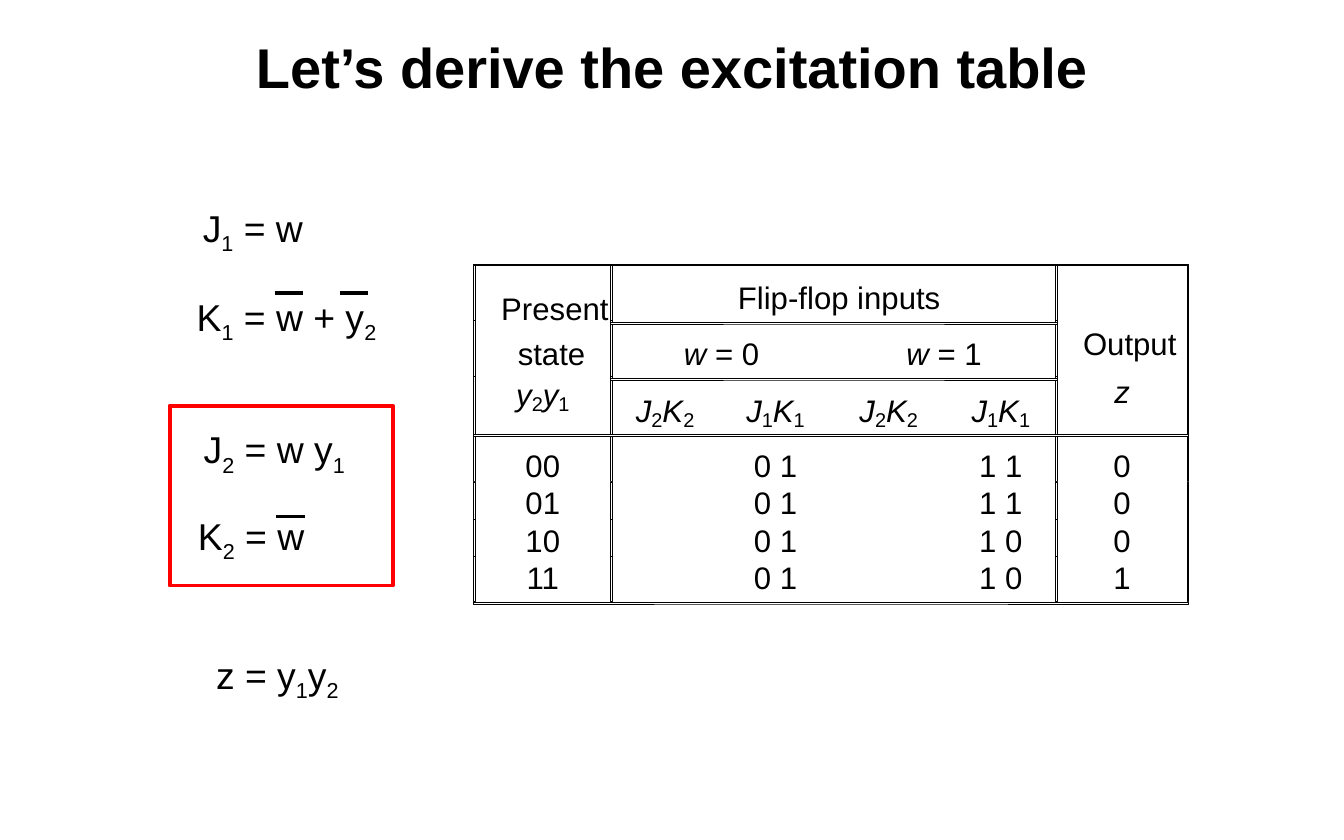
from itertools import pairwise

from lxml import etree
from pptx import Presentation
from pptx.dml.color import RGBColor
from pptx.enum.shapes import MSO_CONNECTOR, MSO_SHAPE
from pptx.enum.text import MSO_ANCHOR, PP_ALIGN
from pptx.oxml.ns import qn
from pptx.util import Cm, Pt

LINE = MSO_CONNECTOR.STRAIGHT
RECT = MSO_SHAPE.RECTANGLE
MIDDLE, BOTTOM = MSO_ANCHOR.MIDDLE, MSO_ANCHOR.BOTTOM
CENTER = PP_ALIGN.CENTER
BLACK, WHITE, RED = "000000", "FFFFFF", "FF0000"
VARIABLES = "JKwyz"


def color(value):
    return RGBColor.from_string(value)


def write(p, text, size, sub_size, sub_shift, italic=False):
    """Add the runs between bars; "_" starts a subscript, variables may be italic."""
    for piece in text.split("|"):
        r = p.add_run()
        r.text = piece.removeprefix("_")
        r.font.name = "Arial"
        r.font.size = Pt(size)
        r.font.color.rgb = color(BLACK)
        if italic and piece in VARIABLES:
            r.font.italic = True
        if piece.startswith("_"):
            r.font.size = Pt(sub_size)
            r.font._element.set("baseline", str(sub_shift * 1000))


prs = Presentation()
prs.slide_width, prs.slide_height = Cm(30.48), Cm(19.05)
s = prs.slides.add_slide(prs.slide_layouts[6])

# Title
tf = s.shapes.add_textbox(Cm(2.54), Cm(0.61), Cm(25.4), Cm(2.18)).text_frame
tf.word_wrap = True
tf.vertical_anchor = MIDDLE
tf.margin_bottom = Cm(0.52)
p = tf.paragraphs[0]
p.alignment = CENTER
write(p, "Let’s derive the excitation table", 36, 36, 0)
p.runs[0].font.bold = True

# Equations
equations = [
    (4.35, 4.53, 2.87, "J|_1| = w"),
    (4.21, 6.55, 4.7, "K|_1| = w + y|_2"),
    (4.37, 9.55, 3.84, "J|_2| = w y|_1"),
    (4.24, 11.51, 3.0, "K|_2| = w"),
    (4.65, 14.66, 3.4, "z = y|_1|y|_2"),
]
for x, y, width, text in equations:
    tf = s.shapes.add_textbox(Cm(x), Cm(y), Cm(width), Cm(1.28)).text_frame
    tf.word_wrap = False
    write(tf.paragraphs[0], text, 24, 24, -25)

# Overlines of the negated variables
for x, y in [(6.23, 6.65), (7.7, 6.65), (6.27, 11.71)]:
    bar = s.shapes.add_connector(LINE, Cm(x), Cm(y), Cm(x + 0.64), Cm(y))
    bar.line.color.rgb = color(BLACK)
    bar.line.width = Pt(2.25)
    etree.SubElement(bar._element.spPr, qn("a:effectLst"))

# Excitation table
col_edges = [10.76, 13.86, 16.31, 18.87, 21.44, 23.96, 26.94]
row_edges = [6.01, 7.42, 8.52, 9.87, 11.03, 11.87, 12.72, 13.68]
row_margins = [0.37, 0.23, 0.35, 0.32, 0, 0, 0]
left, right = col_edges[0], col_edges[-1]
top, bottom = row_edges[0], row_edges[-1]
table = s.shapes.add_table(7, 6, Cm(left), Cm(top),
                           Cm(right - left), Cm(bottom - top)).table
table.first_row = table.horz_banding = False
for col, (a, b) in zip(table.columns, pairwise(col_edges)):
    col.width = Cm(b - a)
for row, (a, b), margin in zip(table.rows, pairwise(row_edges), row_margins):
    row.height = Cm(b - a)
    for cell in row.cells:
        cell.fill.background()
        cell.margin_left = cell.margin_right = cell.margin_bottom = 0
        cell.margin_top = Cm(margin)

for first, last in [((0, 1), (0, 4)), ((1, 1), (1, 2)), ((1, 3), (1, 4))]:
    table.cell(*first).merge(table.cell(*last))

# The outer headings sit closer together than the flip-flop headings
for i, j in [(0, 0), (2, 0), (1, 5), (2, 5)]:
    table.cell(i, j).margin_top = 0
table.cell(0, 0).vertical_anchor = BOTTOM
for i, j, indent in [(0, 0, 0.55), (1, 0, 0.4), (0, 1, 0.25), (1, 5, 0.35)]:
    table.cell(i, j).margin_left = Cm(indent)

contents = {
    (0, 0): "Present", (1, 0): "state", (2, 0): "y|_2|y|_1",
    (0, 1): "Flip-flop inputs", (1, 1): "w| = 0", (1, 3): "w| = 1",
    (1, 5): "Output", (2, 5): "z",
}
for j, flip_flop in enumerate([2, 1, 2, 1], start=1):
    contents[2, j] = f"J|_{flip_flop}|K|_{flip_flop}"
states = [("00", "0 1", "1 1", "0"), ("01", "0 1", "1 1", "0"),
          ("10", "0 1", "1 0", "0"), ("11", "0 1", "1 0", "1")]
for i, state in enumerate(states, start=3):
    for j, value in zip((0, 2, 4, 5), state):
        contents[i, j] = value

for (i, j), text in contents.items():
    p = table.cell(i, j).text_frame.paragraphs[0]
    p.alignment = CENTER
    write(p, text, 20, 22, -15, italic=True)

# Double rules: thin white bars with black outlines
gap = 0.04
rule_tops = [6.02, 7.29, 8.56, 9.89, 10.95, 11.81, 12.65, 13.67]
rules = [(col_edges[j], a, gap, b - a)
         for a, b in pairwise(rule_tops) for j in (0, 1, 5, 6)]
rules += [(left, y, right - left + gap, gap) for y in (6.01, 9.88, 13.68)]
rules += [(col_edges[1], y, col_edges[5] - col_edges[1] + gap, gap)
          for y in (7.33, 8.6)]
for x, y, width, height in rules:
    rule = s.shapes.add_shape(RECT, Cm(x - gap / 2), Cm(y - gap / 2),
                              Cm(width), Cm(height))
    rule.shadow.inherit = False
    rule.fill.solid()
    rule.fill.fore_color.rgb = color(WHITE)
    rule.line.color.rgb = color(BLACK)
    rule.line.width = Pt(0.5)

# Highlight around the second flip-flop
box = s.shapes.add_shape(RECT, Cm(3.85), Cm(9.2), Cm(5.06), Cm(4.08))
box.shadow.inherit = False
box.fill.background()
box.line.color.rgb = color(RED)
box.line.width = Pt(2.5)

prs.save("out.pptx")
